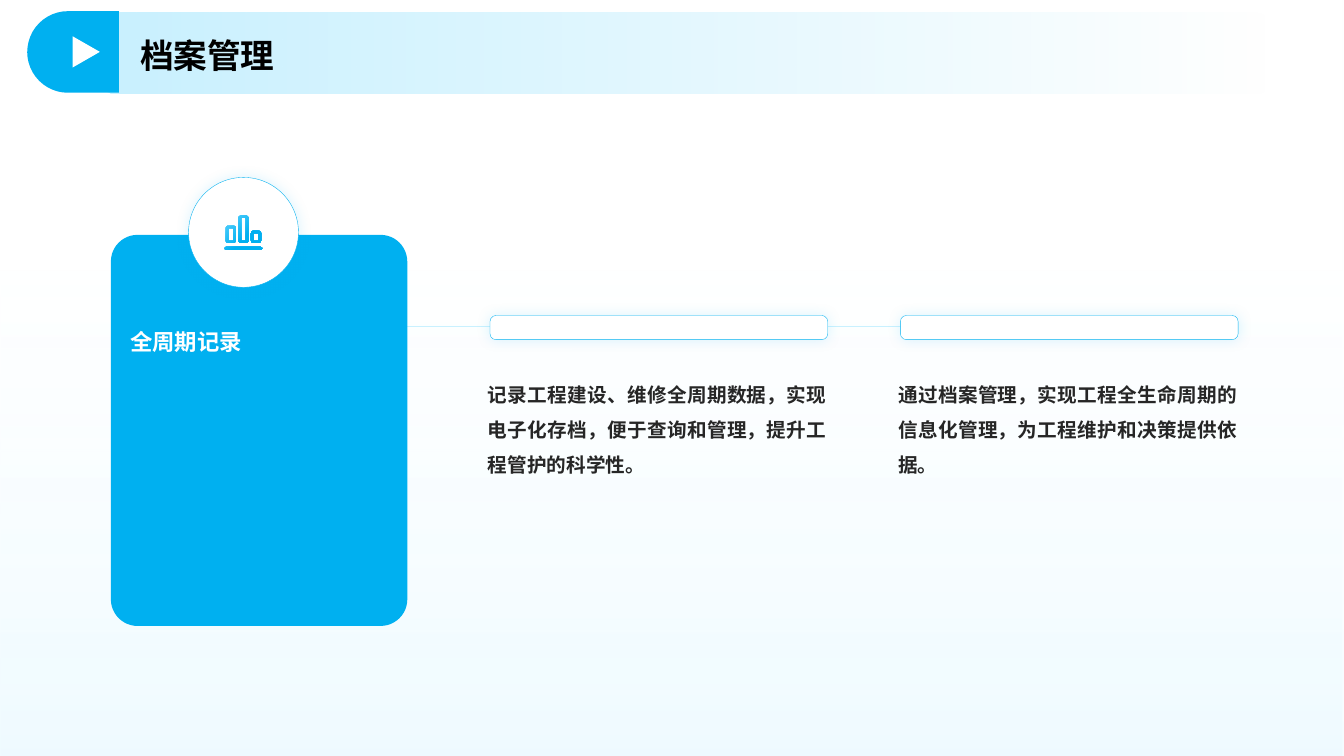
from dataclasses import dataclass
from math import cos, pi, sin

from lxml import etree
from pptx import Presentation
from pptx.dml.color import RGBColor
from pptx.enum.shapes import MSO_CONNECTOR, MSO_SHAPE
from pptx.enum.text import MSO_ANCHOR, MSO_AUTO_SIZE, PP_ALIGN
from pptx.oxml.ns import qn
from pptx.util import Inches, Pt

RECT = MSO_SHAPE.RECTANGLE
ROUND = MSO_SHAPE.ROUNDED_RECTANGLE
OVAL = MSO_SHAPE.OVAL
TAB = MSO_SHAPE.ROUND_2_SAME_RECTANGLE
ARROW = MSO_SHAPE.ISOSCELES_TRIANGLE
STRAIGHT = MSO_CONNECTOR.STRAIGHT
TOP, MIDDLE = MSO_ANCHOR.TOP, MSO_ANCHOR.MIDDLE
JUSTIFY = PP_ALIGN.JUSTIFY
FIXED = MSO_AUTO_SIZE.NONE


@dataclass(frozen=True)
class Theme:
    font: str = "Noto Sans CJK SC"
    blue: str = "00B0F0"
    sky: str = "5DD4FF"
    pale: str = "C9F1FF"
    mist: str = "93E2FF"
    white: str = "FFFFFF"
    black: str = "000000"
    ink: str = "262626"
    title: int = 24
    head: int = 16
    body: int = 14


THEME = Theme()
STEPS = (
    (4.86, "记录工程建设、维修全周期数据，实现电子化存档，便于查询和管理，提升工程管护的科学性。"),
    (8.93, "通过档案管理，实现工程全生命周期的信息化管理，为工程维护和决策提供依据。"),
)
LINKS = ((8, 9.12), (3.94, 4.86))
PILLARS = ((2.24, 2.24), (2.365, 2.14), (2.49, 2.29))


def color(code):
    return RGBColor.from_string(code)


def assign(item, values):
    for name, value in values.items():
        setattr(item, name, value)


def fade(shape, stops, angle):
    shape.fill.gradient()
    shape.fill.gradient_angle = (360 - angle) % 360
    for stop, (place, code, alpha) in zip(shape.fill.gradient_stops, stops):
        stop.position = place
        stop.color.rgb = color(code)
    marks = shape.element.spPr.iter(qn("a:srgbClr"))
    for mark, (place, code, alpha) in zip(marks, stops):
        if alpha < 100:
            etree.SubElement(mark, qn("a:alpha"), val=str(alpha * 1000))


def glow(shape):
    props = shape.element.spPr
    effects = props.find(qn("a:effectLst"))
    shadow = etree.SubElement(effects, qn("a:outerShdw"), blurRad=str(Pt(10)),
                              dist="0", dir="0", algn="ctr", rotWithShape="0")
    tint = etree.SubElement(shadow, qn("a:srgbClr"), val=THEME.blue)
    etree.SubElement(tint, qn("a:alpha"), val="15000")


def add_box(slide, kind, box, fill=None, edge=None, adjust=(), turn=0):
    shape = slide.shapes.add_shape(kind, *map(Inches, box))
    shape.shadow.inherit = False
    shape.rotation = turn
    for index, value in enumerate(adjust):
        shape.adjustments[index] = value
    if fill:
        shape.fill.solid()
        shape.fill.fore_color.rgb = color(fill)
    if edge:
        shape.line.color.rgb = color(edge)
        shape.line.width = Pt(0.25)
        glow(shape)
    else:
        shape.line.fill.background()
    return shape


def add_link(slide, start, end, y):
    link = slide.shapes.add_connector(
        STRAIGHT, Inches(start), Inches(y), Inches(end), Inches(y))
    link.line.color.rgb = color(THEME.pale)
    link.line.width = Pt(1)
    etree.SubElement(link.element.spPr, qn("a:effectLst"))


def write(shape, text, size, code, spacing=1.5, anchor=TOP):
    frame = shape.text_frame
    assign(frame, {
        "text": text, "word_wrap": True, "auto_size": FIXED,
        "vertical_anchor": anchor, "margin_left": 0, "margin_right": 0,
        "margin_top": 0, "margin_bottom": 0,
    })
    para = frame.paragraphs[0]
    assign(para, {"alignment": JUSTIFY, "line_spacing": spacing,
                  "space_before": Pt(0)})
    run = para.runs[0]
    assign(run.font, {"name": THEME.font, "size": Pt(size), "bold": True})
    run.font.color.rgb = color(code)
    etree.SubElement(run.font._element, qn("a:ea"), typeface=THEME.font)


def add_text(slide, box, text, size, code):
    write(slide.shapes.add_textbox(*map(Inches, box)), text, size, code)


def set_title(slide, box, text):
    title = slide.shapes.title
    names = ("left", "top", "width", "height")
    assign(title, dict(zip(names, map(Inches, box))))
    write(title, text, THEME.title, THEME.black, 1.1, MIDDLE)
    title.element.getparent().append(title.element)


def outline(left, top, right, base, radius):
    corners = ((right - radius, base - radius), (left + radius, base - radius),
               (left + radius, top + radius), (right - radius, top + radius))
    points = []
    for turn, (x, y) in enumerate(corners):
        for step in range(5):
            angle = (turn + step / 4) * pi / 2
            points.append((Inches(x + radius * cos(angle)),
                           Inches(y + radius * sin(angle))))
    return points


def add_icon(slide):
    loops = [outline(2.23, 2.45, 2.6, 2.48, 0.015)]
    for left, top in PILLARS:
        loops.append(outline(left, top, left + 0.1, 2.41, 0.025))
        loops.append(outline(left + 0.027, top + 0.023,
                             left + 0.073, 2.39, 0.003)[::-1])
    pen = slide.shapes.build_freeform(*loops[0][0], scale=1)
    for index, loop in enumerate(loops):
        if index:
            pen.move_to(*loop[0])
        pen.add_line_segments(loop[1:], close=True)
    icon = pen.convert_to_shape()
    icon.shadow.inherit = False
    icon.line.fill.background()
    fade(icon, ((0, THEME.sky, 100), (0.6, THEME.blue, 100)), 45)


def add_steps(slide):
    for start, end in LINKS:
        add_link(slide, start, end, 3.24)
    for left, text in STEPS:
        add_box(slide, ROUND, (left, 3.13, 3.35, 0.24), THEME.white,
                THEME.blue, (0.25,))
        add_text(slide, (left - 0.02, 3.68, 3.36, 1.06), text,
                 THEME.body, THEME.ink)


def add_card(slide):
    add_box(slide, ROUND, (1.1, 2.33, 2.94, 3.88), THEME.blue, adjust=(0.09,))
    add_box(slide, OVAL, (1.87, 1.76, 1.09, 1.09), THEME.white, THEME.blue)
    add_icon(slide)
    add_text(slide, (1.29, 3.12, 2.39, 2.79), "全周期记录",
             THEME.head, THEME.white)


def add_header(slide):
    band = add_box(slide, ROUND, (1, 0.12, 11.6, 0.81))
    fade(band, ((0, THEME.pale, 100), (1, THEME.pale, 0)), 0)
    set_title(slide, (1.39, 0.26, 8.51, 0.54), "档案管理")
    add_box(slide, TAB, (0.32, 0.06, 0.81, 0.91), THEME.blue,
            adjust=(0.5, 0), turn=270)
    add_box(slide, ARROW, (0.7, 0.38, 0.31, 0.27), THEME.white, turn=90)


def main():
    deck = Presentation()
    assign(deck, {"slide_width": Inches(13.33), "slide_height": Inches(7.5)})
    slide = deck.slides.add_slide(deck.slide_layouts[5])
    wash = add_box(slide, RECT, (0, 0, 13.33, 7.5))
    fade(wash, ((0.35, THEME.pale, 0), (1, THEME.mist, 15)), 90)
    add_steps(slide)
    add_card(slide)
    add_header(slide)
    deck.save("out.pptx")


if __name__ == "__main__":
    main()
